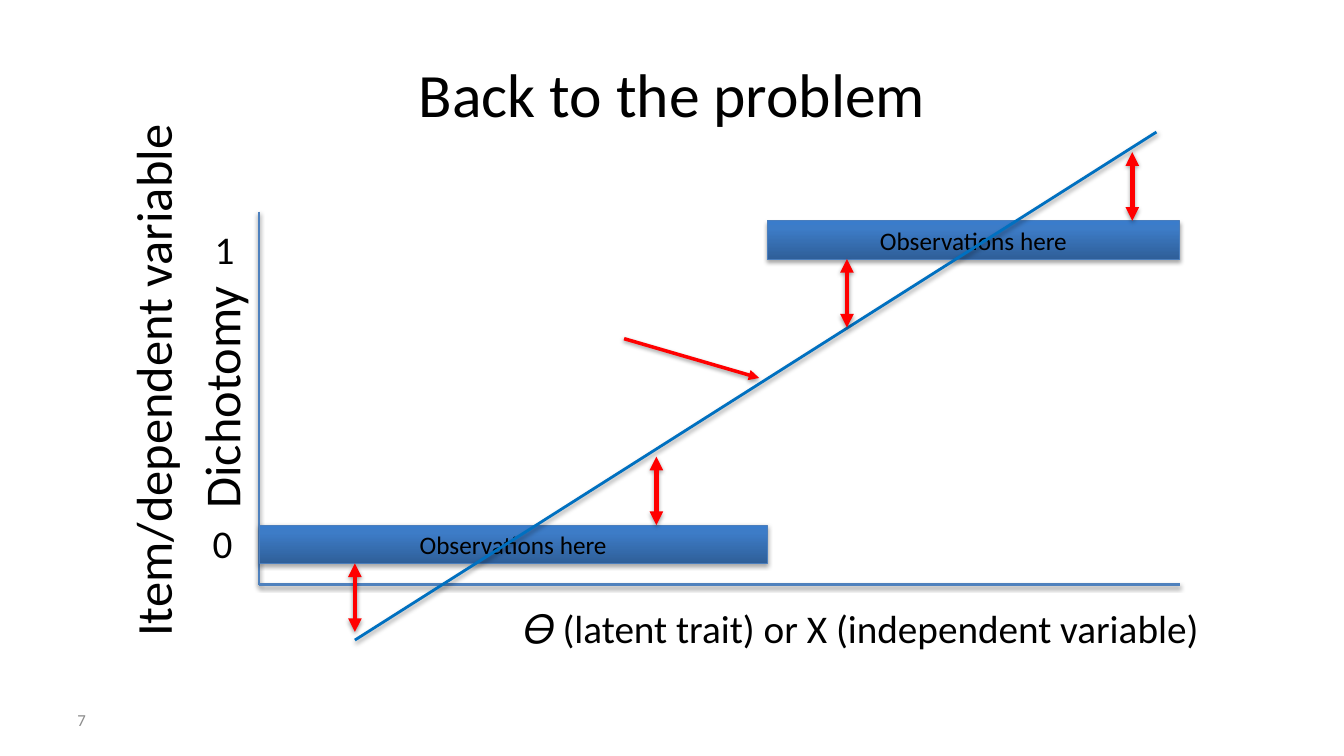
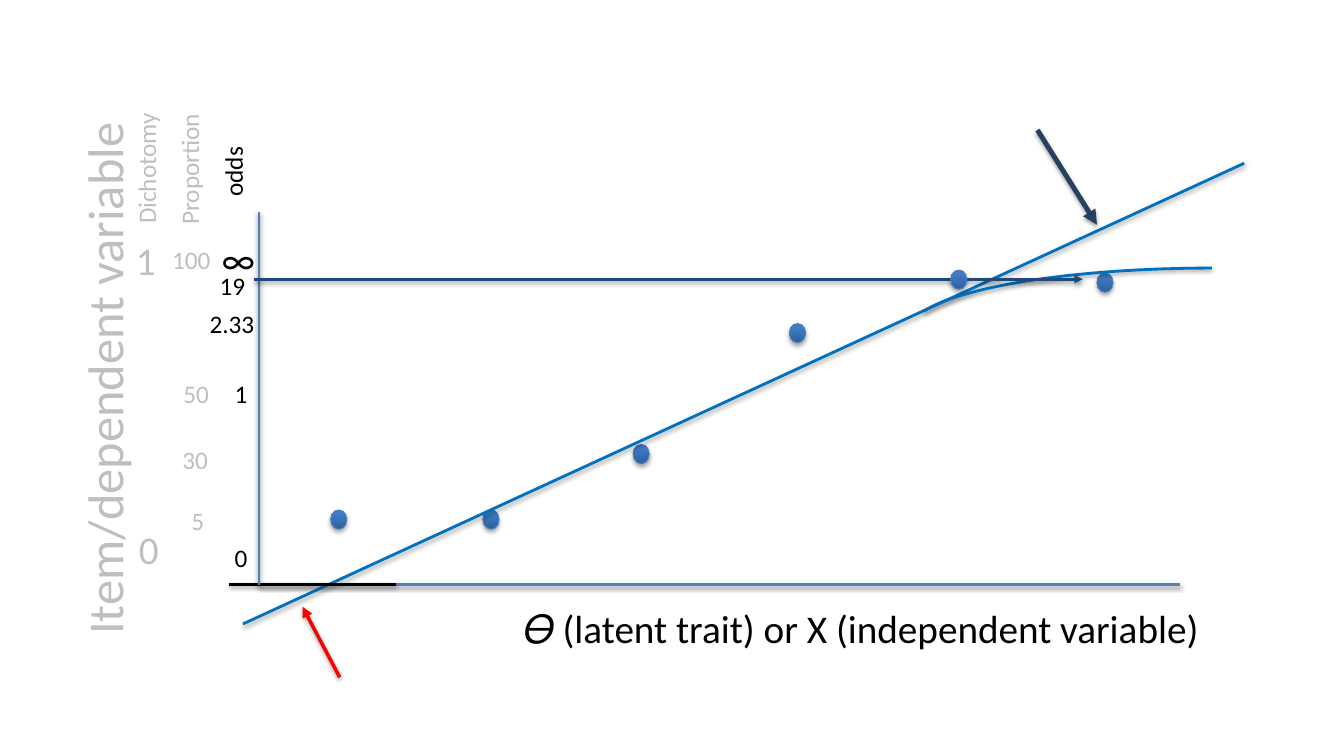
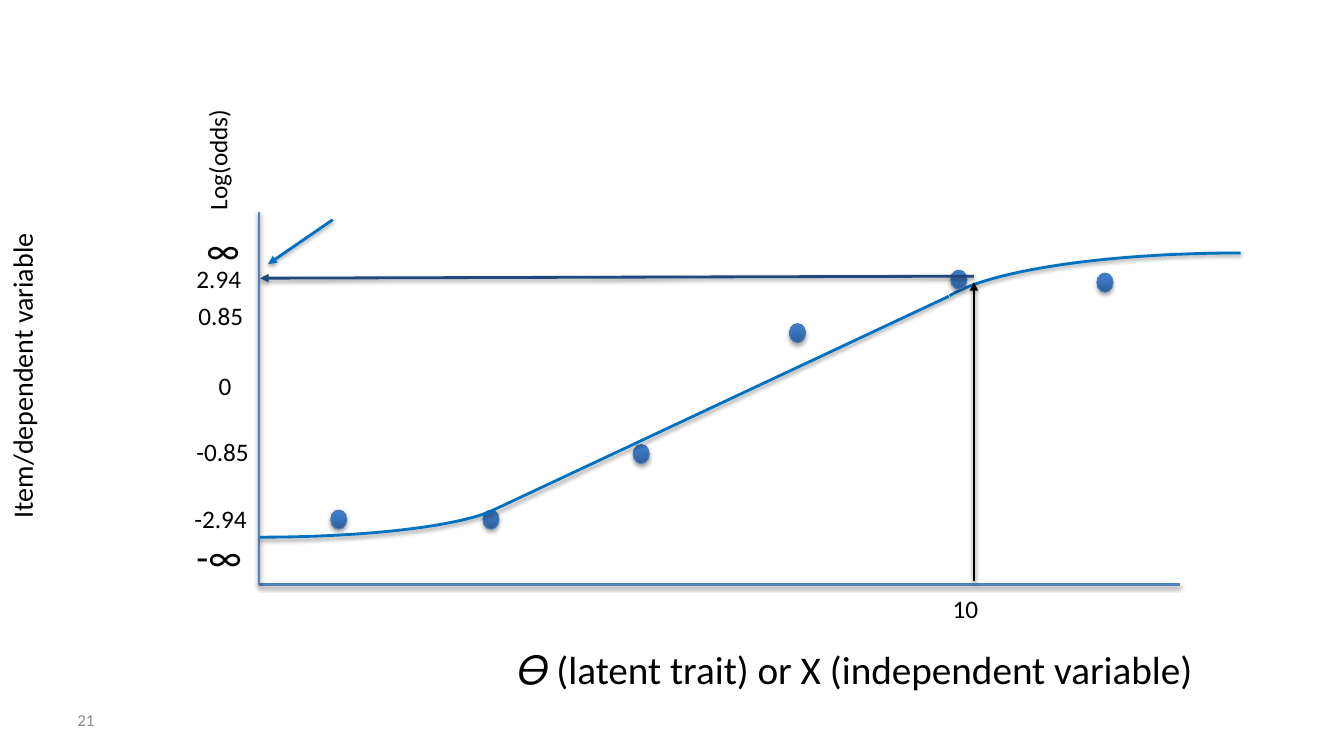
from copy import deepcopy

from lxml.etree import SubElement
from pptx import Presentation
from pptx.dml.color import RGBColor
from pptx.enum.shapes import MSO_CONNECTOR, MSO_SHAPE
from pptx.enum.text import MSO_ANCHOR, MSO_AUTO_SIZE, PP_ALIGN
from pptx.oxml.ns import qn
from pptx.util import Inches, Pt

# Shared look
FONT = "Calibri"
BLACK = RGBColor(0x00, 0x00, 0x00)
FADED = RGBColor(0xBF, 0xBF, 0xBF)
NUMBER_GREY = RGBColor(0x8C, 0x8C, 0x8C)
AXIS_BLUE = RGBColor(0x4F, 0x81, 0xBD)
FIT_BLUE = RGBColor(0x00, 0x70, 0xC0)
EDGE_BLUE = RGBColor(0x4B, 0x7E, 0xBC)
GUIDE_NAVY = RGBColor(0x1F, 0x49, 0x7D)
POINTER_NAVY = RGBColor(0x25, 0x40, 0x61)
RED = RGBColor(0xFF, 0x00, 0x00)
SHADE = (
    (0, RGBColor(0x2F, 0x5F, 0x99)),
    (0.8, RGBColor(0x3D, 0x7C, 0xC7)),
    (1, RGBColor(0x3A, 0x7C, 0xCB)),
)
LINE_SHADOW = {"alpha": 38000, "dist": 20000}
SOLID_SHADOW = {"alpha": 35000, "dist": 23000}
TEXT_HEIGHT = {12: 0.4, 18: 0.4, 20: 0.44, 28: 0.57, 36: 0.71}

# Plot geometry shared by all slides
LEFT, RIGHT, TOP, BASE = 2.57, 11.7, 2.1, 5.8
BAR_SPLIT, BAR_HEIGHT = 7.61, 0.38
BAR_TOP = {"one": 2.19, "zero": 5.21}
RESIDUAL = 0.68
DOT_WIDTH, DOT_HEIGHT = 0.16, 0.19
ARC_ANGLES = (162, 213.743)

# Content: labels are (text, left, top, width)
X_TITLE = "𝛳 (latent trait) or X (independent variable)"
Y_TITLE = "Item/dependent variable"
BAR_TEXT = "Observations here"
DOTS = [(3.28, 5.06), (6.28, 4.41), (7.83, 3.21), (4.79, 5.06), (10.88, 2.71)]
TOP_DOT = (9.43, 2.68)

DICHOTOMY_TICKS = [("0", 2.01, 5.1, 0.4), ("1", 2.03, 2.19, 0.4)]
FADED_DICHOTOMY = [("0", 1.28, 5.16, 0.4), ("1", 1.25, 2.3, 0.4)]
FADED_SCALES = [("Dichotomy", 0.79, 1.46, 1.32), ("Proportion", 1.22, 1.47, 1.31)]
PROPORTIONS = [("5", 1.8, 4.96, 0.33), ("50", 1.72, 3.7, 0.46),
               ("100", 1.61, 2.37, 0.59), ("30", 1.71, 4.36, 0.46)]
ODDS = [("0", 2.23, 5.33, 0.33), ("1", 2.23, 3.7, 0.33),
        ("2.33", 1.98, 3.01, 0.65), ("19", 2.08, 2.63, 0.46)]
LOG_ODDS = [("0", 2.07, 3.62, 0.33), ("0.85", 1.87, 2.93, 0.65),
            ("2.94", 1.85, 2.56, 0.65), ("-0.85", 1.85, 4.28, 0.73),
            ("-2.94", 1.83, 4.94, 0.73), ("10", 9.35, 5.84, 0.46)]
LOG_LIMITS = [("-∞", 1.85, 5.23, 0.66), ("∞", 1.95, 2.19, 0.54)]


def box(left, top, width, height):
    return [Inches(v) for v in (left, top, width, height)]


def set_font(run, size, color):
    for key, value in {"name": FONT, "size": Pt(size)}.items():
        setattr(run.font, key, value)
    run.font.color.rgb = color


def add_shadow(part, alpha, dist):
    """Soft shadow straight below the part."""
    effects = SubElement(part._element.spPr, qn("a:effectLst"))
    outer = SubElement(effects, qn("a:outerShdw"), blurRad="40000",
                       dist=str(dist), dir="5400000", rotWithShape="0")
    black = SubElement(outer, qn("a:srgbClr"), val=str(BLACK))
    SubElement(black, qn("a:alpha"), val=str(alpha))


def add_labels(slide, labels, size=18, color=BLACK, turned=False, wrap=False):
    for text, left, top, width in labels:
        label = slide.shapes.add_textbox(*box(left, top, width, TEXT_HEIGHT[size]))
        label.rotation = 270 if turned else 0
        frame = label.text_frame
        frame.word_wrap = wrap
        frame.auto_size = MSO_AUTO_SIZE.SHAPE_TO_FIT_TEXT
        run = frame.paragraphs[0].add_run()
        run.text = text
        set_font(run, size, color)


def add_line(slide, start, end, color, width=2, heads=()):
    """Straight line; heads lists the arrowheads: headEnd, tailEnd."""
    points = [Inches(v) for v in (*start, *end)]
    line = slide.shapes.add_connector(MSO_CONNECTOR.STRAIGHT, *points)
    line.line.color.rgb = color
    line.line.width = Pt(width)
    for head in heads:
        SubElement(line.line._get_or_add_ln(), qn(f"a:{head}"), type="triangle")
    add_shadow(line, **LINE_SHADOW)


def add_arrow(slide, start, end, color, width=2):
    add_line(slide, start, end, color, width, ["tailEnd"])


def add_solid(slide, kind, left, top, width, height):
    """Shape with the blue gradient of the observations."""
    solid = slide.shapes.add_shape(kind, *box(left, top, width, height))
    solid.fill.gradient()
    solid.fill.gradient_angle = 90
    stops = solid._element.spPr.find(".//" + qn("a:gsLst"))
    stops.append(deepcopy(stops[1]))
    for stop, (position, color) in zip(solid.fill.gradient_stops, SHADE):
        stop.position = position
        stop.color.rgb = color
    solid.line.color.rgb = EDGE_BLUE
    solid.line.width = Pt(0.75)
    add_shadow(solid, **SOLID_SHADOW)
    return solid


def add_dots(slide, dots):
    for left, top in dots:
        add_solid(slide, MSO_SHAPE.OVAL, left, top, DOT_WIDTH, DOT_HEIGHT)


def add_bar(slide, left, right, top):
    bar = add_solid(slide, MSO_SHAPE.RECTANGLE, left, top, right - left, BAR_HEIGHT)
    bar.text_frame.vertical_anchor = MSO_ANCHOR.MIDDLE
    paragraph = bar.text_frame.paragraphs[0]
    paragraph.alignment = PP_ALIGN.CENTER
    run = paragraph.add_run()
    run.text = BAR_TEXT
    set_font(run, 18, BLACK)


def add_bend(slide, left, top, width, height, flip):
    bend = slide.shapes.add_shape(MSO_SHAPE.ARC, *box(left, top, width, height))
    for i, angle in enumerate(ARC_ANGLES):
        bend.adjustments[i] = angle
    bend._element.spPr.find(qn("a:xfrm")).set(flip, "1")
    bend.fill.background()
    bend.line.color.rgb = FIT_BLUE
    bend.line.width = Pt(2)
    add_shadow(bend, **LINE_SHADOW)


def add_x_axis(slide, title_left=5.09, title_top=5.95):
    add_line(slide, (RIGHT, BASE), (LEFT, BASE), AXIS_BLUE)
    add_labels(slide, [(X_TITLE, title_left, title_top, 6.93)], 28, wrap=True)


def add_y_axis(slide):
    add_line(slide, (LEFT, TOP), (LEFT, BASE), AXIS_BLUE)


def add_number(slide, number):
    add_labels(slide, [(number, 0.67, 6.99, 3.11)], 12, NUMBER_GREY, wrap=True)


def build_problem(prs):
    slide = prs.slides.add_slide(prs.slide_layouts[5])
    title = slide.shapes.title
    title.left, title.top, title.width, title.height = box(0.67, 0.3, 12, 1.25)
    title.text_frame.text = "Back to the problem"
    set_font(title.text_frame.paragraphs[0].runs[0], 44, BLACK)
    add_number(slide, "7")
    add_y_axis(slide)
    add_x_axis(slide)
    add_labels(slide, [(Y_TITLE, -1.15, 3.4, 5.32), ("Dichotomy", 0.98, 3.58, 2.42)],
               36, turned=True)
    add_labels(slide, DICHOTOMY_TICKS, 28)
    add_bar(slide, BAR_SPLIT, RIGHT, BAR_TOP["one"])
    add_bar(slide, LEFT, BAR_SPLIT, BAR_TOP["zero"])
    add_line(slide, (11.47, 1.31), (3.52, 6.35), FIT_BLUE)
    # Residuals between the bars and the fitted line
    one, zero = BAR_TOP["one"], BAR_TOP["zero"]
    for x, top in [(3.52, zero + BAR_HEIGHT), (6.51, zero - RESIDUAL),
                   (8.4, one + BAR_HEIGHT), (11.23, one - RESIDUAL)]:
        add_line(slide, (x, top), (x, top + RESIDUAL), RED, 3.25,
                 ["headEnd", "tailEnd"])
    add_arrow(slide, (6.19, 3.36), (7.53, 3.75), RED, 2.5)


def build_odds(prs):
    slide = prs.slides.add_slide(prs.slide_layouts[6])
    add_x_axis(slide)
    add_dots(slide, DOTS)
    add_line(slide, (12.34, 1.62), (2.41, 6.19), FIT_BLUE)
    add_arrow(slide, (3.37, 6.72), (3, 6.02), RED, 2.5)
    add_arrow(slide, (10.29, 1.29), (10.88, 2.23), POINTER_NAVY, 3.5)
    add_line(slide, (3.93, BASE), (2.27, BASE), BLACK)
    add_y_axis(slide)
    # Earlier scales stay faded, odds are in black
    add_labels(slide, [(Y_TITLE, -1.63, 3.38, 5.32)], 36, FADED, turned=True)
    add_labels(slide, FADED_DICHOTOMY, 28, FADED)
    add_labels(slide, FADED_SCALES, color=FADED, turned=True)
    add_labels(slide, PROPORTIONS, color=FADED)
    add_labels(slide, [("odds", 1.96, 1.5, 0.7)], turned=True)
    add_labels(slide, ODDS)
    add_labels(slide, [("∞", 2.1, 2.29, 0.54)], 28)
    add_bend(slide, 9.02, 2.66, 6, 1.23, "flipH")
    add_arrow(slide, (2.52, 2.77), (10.74, 2.77), GUIDE_NAVY)
    add_dots(slide, [TOP_DOT])


def build_log_odds(prs):
    slide = prs.slides.add_slide(prs.slide_layouts[6])
    add_number(slide, "21")
    add_x_axis(slide, 5.03, 6.35)
    add_labels(slide, [(Y_TITLE, -1.31, 3.49, 3.06)], 20, turned=True)
    add_dots(slide, DOTS)
    # S-curve: straight middle with a bend at each end
    add_line(slide, (9.41, 2.94), (4.85, 5.08), FIT_BLUE)
    add_y_axis(slide)
    add_bend(slide, 9.27, 2.51, 6.07, 1.23, "flipH")
    add_labels(slide, [("Log(odds)", 1.55, 1.38, 1.21)], turned=True)
    add_labels(slide, LOG_LIMITS, 28)
    add_labels(slide, LOG_ODDS)
    add_bend(slide, 0.13, 4.53, 4.9, 0.8, "flipV")
    add_dots(slide, [TOP_DOT])
    # Reading the curve at 10
    add_arrow(slide, (9.66, 5.76), (9.66, 2.8), BLACK)
    add_arrow(slide, (9.66, 2.74), (2.58, 2.76), GUIDE_NAVY)
    add_arrow(slide, (3.3, 2.18), (2.66, 2.62), FIT_BLUE)


def main():
    prs = Presentation()
    prs.slide_width, prs.slide_height = Inches(13.33), Inches(7.5)
    for build in (build_problem, build_odds, build_log_odds):
        build(prs)
    prs.save("out.pptx")


if __name__ == "__main__":
    main()
